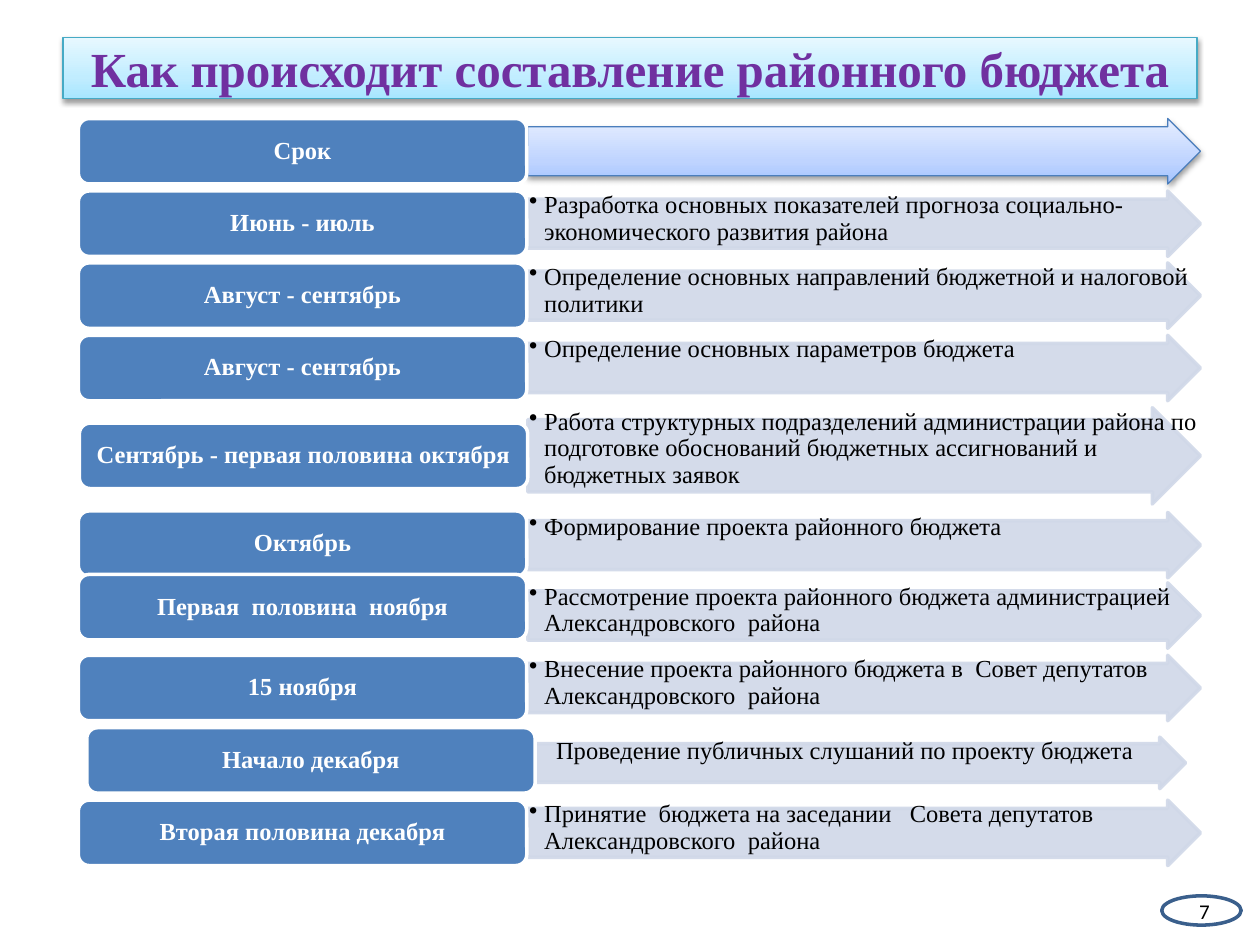
from copy import deepcopy
from dataclasses import dataclass

from lxml.etree import SubElement
from pptx import Presentation
from pptx.dml.color import RGBColor
from pptx.enum.shapes import MSO_SHAPE
from pptx.enum.text import MSO_ANCHOR, PP_ALIGN
from pptx.oxml.ns import qn
from pptx.util import Cm, Pt

WHITE = RGBColor(0xFF, 0xFF, 0xFF)
BLACK = RGBColor(0x00, 0x00, 0x00)
PURPLE = RGBColor(0x70, 0x30, 0xA0)
LABEL_BLUE = RGBColor(0x4F, 0x81, 0xBD)
ARROW_GREY = RGBColor(0xD0, 0xD8, 0xE8)
HEADER_LINE = RGBColor(0x4B, 0x7E, 0xBC)
TITLE_LINE = RGBColor(0x46, 0xAA, 0xC5)
BADGE_LINE = RGBColor(0x3A, 0x5F, 0x8C)
HEADER_SHADES = tuple(map(RGBColor.from_string, ("A4C4FF", "BFD4FF", "E6EEFF")))
TITLE_SHADES = tuple(map(RGBColor.from_string, ("A7E6FF", "C1EDFF", "E7F8FF")))
SHADE_POSITIONS = (0, 0.35, 1)

SERIF = "Times New Roman"
TITLE_FONT = {"name": SERIF, "size": Pt(28), "bold": True}
LABEL_FONT = {"name": SERIF, "size": Pt(14), "bold": True}
TASK_FONT = {"name": SERIF, "size": Pt(14), "bold": False}
NUMBER_FONT = {"name": "Calibri", "size": Pt(12), "bold": False}

LABEL_FRAME = {"margin_left": Cm(0.15), "margin_right": Cm(0.15),
               "margin_top": Cm(0.08), "margin_bottom": Cm(0.08),
               "vertical_anchor": MSO_ANCHOR.MIDDLE, "word_wrap": True}
TASK_FRAME = {"margin_left": Cm(0.03), "margin_right": Cm(0.03),
              "margin_top": Cm(0.03), "margin_bottom": Cm(0.03),
              "vertical_anchor": MSO_ANCHOR.TOP, "word_wrap": True}
MIDDLE_FRAME = {"vertical_anchor": MSO_ANCHOR.MIDDLE, "word_wrap": True}

CENTRED = {"alignment": PP_ALIGN.CENTER}
LABEL_PARAGRAPH = {"alignment": PP_ALIGN.CENTER, "line_spacing": 0.9}
TASK_PARAGRAPH = {"alignment": PP_ALIGN.LEFT, "line_spacing": 0.9}
RIGHT = {"alignment": PP_ALIGN.RIGHT}

LABEL_LEFT, LABEL_WIDTH = 1.58, 9.04
ARROW_LEFT, ARROW_WIDTH = 10.64, 13.56
ROW_HEIGHT = 1.32
HANG = 0.3


@dataclass(frozen=True)
class Box:
    left: float
    top: float
    width: float
    height: float

    def lengths(self) -> tuple:
        return tuple(map(Cm, (self.left, self.top, self.width, self.height)))


@dataclass(frozen=True)
class Stage:
    term: str
    task: str
    arrow_top: float
    arrow_height: float = ROW_HEIGHT
    arrow_width: float = ARROW_WIDTH
    label_drop: float = 0
    label_shift: float = 0
    indent: float = HANG
    bullet: bool = True


STAGES = (
    Stage("Срок", "", 2.39),
    Stage("Июнь - июль", "Разработка основных показателей прогноза "
          "социально-экономического развития района", 3.85),
    Stage("Август - сентябрь", "Определение основных направлений бюджетной "
          "и налоговой политики", 5.3),
    Stage("Август - сентябрь", "Определение основных параметров бюджета", 6.76),
    Stage("Сентябрь - первая половина октября",
          "Работа структурных подразделений администрации района по подготовке "
          "обоснований бюджетных ассигнований и бюджетных заявок",
          8.22, arrow_height=1.94, label_drop=0.31, label_shift=0.02),
    Stage("Октябрь", "Формирование проекта районного бюджета", 10.33,
          label_drop=-0.03),
    Stage("Первая  половина  ноября", "Рассмотрение проекта районного бюджета "
          "администрацией Александровского  района", 11.75, label_drop=-0.17),
    Stage("15 ноября", "Внесение проекта районного бюджета в  Совет депутатов  "
          "Александровского  района", 13.21),
    Stage("Начало декабря", "Проведение публичных слушаний по проекту бюджета",
          14.86, arrow_height=1.04, arrow_width=13.26, label_drop=-0.19,
          label_shift=0.17, indent=0.54, bullet=False),
    Stage("Вторая половина декабря", "Принятие  бюджета на заседании   Совета "
          "депутатов  Александровского  района", 16.13),
)


def apply_format(target, values: dict) -> None:
    for name, value in values.items():
        setattr(target, name, value)


def add_figure(slide, kind, box: Box, fill, line: RGBColor, line_width: float):
    """Add a preset shape; fill is one colour or a tuple of gradient shades."""
    shape = slide.shapes.add_shape(kind, *box.lengths())
    shape.shadow.inherit = False
    if isinstance(fill, RGBColor):
        shape.fill.solid()
        shape.fill.fore_color.rgb = fill
    else:
        shade_upward(shape, fill)
        drop_shadow(shape)
    shape.line.color.rgb = line
    shape.line.width = Pt(line_width)
    return shape


def shade_upward(shape, shades: tuple) -> None:
    shape.fill.gradient()
    shape.fill.gradient_angle = 90
    stops = next(shape.element.spPr.iter(qn("a:gsLst")))
    stops.append(deepcopy(stops[-1]))
    for stop, shade, position in zip(shape.fill.gradient_stops, shades, SHADE_POSITIONS):
        stop.color.rgb = shade
        stop.position = position


def drop_shadow(shape) -> None:
    effects = shape.element.spPr.find(qn("a:effectLst"))
    shadow = SubElement(effects, qn("a:outerShdw"), blurRad="40000", dist="20000",
                        dir="5400000", rotWithShape="0")
    colour = SubElement(shadow, qn("a:srgbClr"), val="000000")
    SubElement(colour, qn("a:alpha"), val="38000")


def make_translucent(shape) -> None:
    """Set fill and line to 90 % opacity."""
    for colour in shape.element.spPr.iter(qn("a:srgbClr")):
        SubElement(colour, qn("a:alpha"), val="90000")


def write(shape, text: str, font: dict, colour: RGBColor, frame: dict, layout: dict):
    apply_format(shape.text_frame, frame)
    paragraph = shape.text_frame.paragraphs[0]
    apply_format(paragraph, layout)
    run = paragraph.add_run()
    run.text = text
    apply_format(run.font, font)
    run.font.color.rgb = colour
    return paragraph


def add_task(slide, stage: Stage, box: Box) -> None:
    area = slide.shapes.add_textbox(*box.lengths())
    paragraph = write(area, stage.task, TASK_FONT, BLACK, TASK_FRAME, TASK_PARAGRAPH)
    properties = paragraph._p.get_or_add_pPr()
    properties.set("marL", str(Cm(stage.indent)))
    if stage.bullet:
        properties.set("indent", str(-Cm(HANG)))
        SubElement(properties, qn("a:buChar"), char="•")


def add_stage(slide, stage: Stage) -> None:
    arrow_box = Box(ARROW_LEFT, stage.arrow_top, stage.arrow_width, stage.arrow_height)
    style = (ARROW_GREY, ARROW_GREY, 2) if stage.task else (HEADER_SHADES, HEADER_LINE, 0.75)
    arrow = add_figure(slide, MSO_SHAPE.RIGHT_ARROW, arrow_box, *style)
    arrow.adjustments[0] = 0.75
    if stage.task:
        make_translucent(arrow)
        add_task(slide, stage, arrow_box)
    label_box = Box(LABEL_LEFT + stage.label_shift, stage.arrow_top + stage.label_drop,
                    LABEL_WIDTH, ROW_HEIGHT)
    label = add_figure(slide, MSO_SHAPE.ROUNDED_RECTANGLE, label_box, LABEL_BLUE, WHITE, 2)
    write(label, stage.term, LABEL_FONT, WHITE, LABEL_FRAME, LABEL_PARAGRAPH)


def main() -> None:
    deck = Presentation()
    deck.slide_width, deck.slide_height = Cm(25.4), Cm(19.05)
    slide = deck.slides.add_slide(deck.slide_layouts[6])

    for stage in STAGES:
        add_stage(slide, stage)

    add_figure(slide, MSO_SHAPE.OVAL, Box(23.42, 18.06, 1.6, 0.59), WHITE, BADGE_LINE, 2)
    title = add_figure(slide, MSO_SHAPE.RECTANGLE, Box(1.27, 0.76, 22.86, 1.23),
                       TITLE_SHADES, TITLE_LINE, 0.75)
    write(title, "Как происходит составление районного бюджета", TITLE_FONT, PURPLE,
          MIDDLE_FRAME, CENTRED)
    page_number = slide.shapes.add_textbox(*Box(18.29, 17.96, 6.35, 0.81).lengths())
    write(page_number, "7", NUMBER_FONT, BLACK, MIDDLE_FRAME, RIGHT)

    deck.save("out.pptx")


if __name__ == "__main__":
    main()
